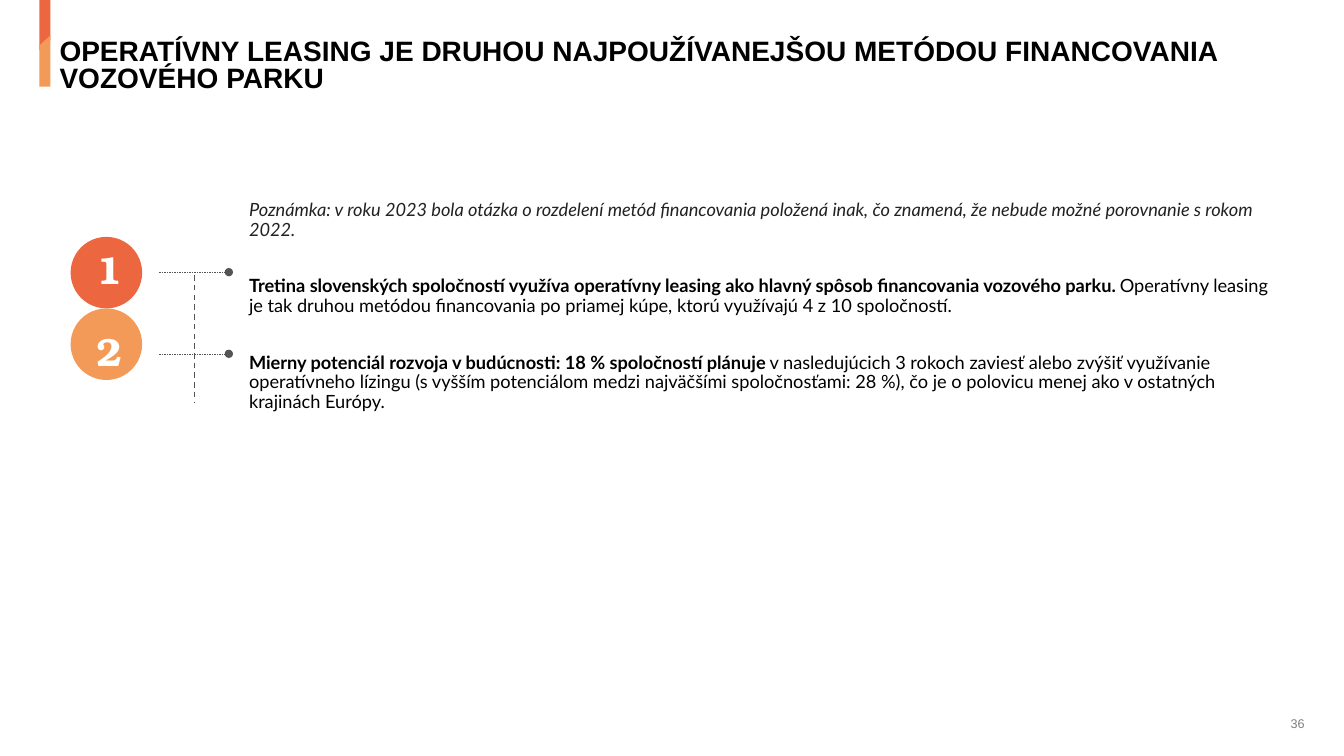
from lxml.etree import SubElement
from pptx import Presentation
from pptx.dml.color import RGBColor
from pptx.enum.dml import MSO_LINE
from pptx.enum.shapes import MSO_CONNECTOR, MSO_SHAPE
from pptx.enum.text import MSO_ANCHOR, PP_ALIGN
from pptx.oxml.ns import qn
from pptx.util import Inches, Pt

TITLE = "OPERATÍVNY LEASING JE DRUHOU NAJPOUŽÍVANEJŠOU METÓDOU FINANCOVANIA VOZOVÉHO PARKU"
NOTE = ("Poznámka: v roku 2023 bola otázka o rozdelení metód financovania položená inak, "
        "čo znamená, že nebude možné porovnanie s rokom 2022.")
FINDINGS = [
    ("Tretina slovenských spoločností využíva operatívny leasing ako hlavný spôsob "
     "financovania vozového parku. ",
     "Operatívny leasing je tak druhou metódou financovania po priamej kúpe, "
     "ktorú využívajú 4 z 10 spoločností."),
    ("Mierny potenciál rozvoja v budúcnosti: 18 % spoločností plánuje",
     " v nasledujúcich 3 rokoch zaviesť alebo zvýšiť využívanie operatívneho lízingu "
     "(s vyšším potenciálom medzi najväčšími spoločnosťami: 28 %), čo je o polovicu menej "
     "ako v ostatných krajinách Európy."),
]


def color(value):
    """Turn a hex string into a colour."""
    return RGBColor.from_string(value)


def add_span(para, text, font="Lato", size=13, fill="000000", bold=False, italic=False):
    """Add formatted text to a paragraph."""
    span = para.add_run()
    span.text = text
    span.font.name, span.font.size = font, Pt(size)
    span.font.bold, span.font.italic = bold, italic
    span.font.color.rgb = color(fill)


class PageBuilder:
    """Hold the style and the page being built."""

    accents = ("EC6740", "F39A58")
    rule = "545454"

    def __init__(self, page):
        """Keep the page."""
        self.page = page

    def place(self, box, left, top, width, height):
        """Move and size a box."""
        box.left, box.top = Inches(left), Inches(top)
        box.width, box.height = Inches(width), Inches(height)

    def frame(self, box, inset=0, wrap=True, anchor=MSO_ANCHOR.TOP):
        """Set the margins, wrapping and anchor of a box."""
        frame = box.text_frame
        frame.margin_left = Inches(inset)
        frame.margin_top = frame.margin_right = frame.margin_bottom = 0
        frame.word_wrap, frame.vertical_anchor = wrap, anchor
        return frame

    def paragraph(self, para, spacing=0.9, before=0, align=PP_ALIGN.LEFT):
        """Set the spacing and alignment of a paragraph."""
        para.line_spacing, para.space_before = spacing, Pt(before)
        para.space_after, para.alignment = Pt(0), align
        return para

    def title(self, text):
        """Fill the title placeholder."""
        box = self.page.shapes.title
        self.place(box, 0.39, 0.4, 12.55, 0.54)
        para = self.paragraph(self.frame(box, inset=0.2).paragraphs[0], spacing=0.8)
        add_span(para, text, font="Arial", size=20, bold=True)

    def body(self, note, findings):
        """Fill the body placeholder with the note and the findings."""
        box = self.page.placeholders[1]
        self.place(box, 2.47, 1.99, 10.25, 2.11)
        frame = self.frame(box)
        add_span(self.body_paragraph(frame.paragraphs[0]), note, fill="222222", italic=True)
        for lead, rest in findings:
            para = self.body_paragraph(frame.add_paragraph(), before=26.5)
            add_span(para, lead, bold=True)
            add_span(para, rest)

    def body_paragraph(self, para, before=0):
        """Take the bullet and indent off a body paragraph."""
        properties = para._p.get_or_add_pPr()
        properties.set("marL", "0")
        properties.set("indent", "0")
        SubElement(properties, qn("a:buNone"))
        return self.paragraph(para, before=before)

    def shape(self, kind, left, top, width, height, fill, rotation=0):
        """Add a plain filled shape."""
        shape = self.page.shapes.add_shape(
            kind, Inches(left), Inches(top), Inches(width), Inches(height))
        shape.shadow.inherit = False
        shape.fill.solid()
        shape.fill.fore_color.rgb = color(fill)
        shape.line.fill.background()
        shape.rotation = rotation

    def text(self, text, left, top, width, height, spacing=1.0,
             align=PP_ALIGN.LEFT, anchor=MSO_ANCHOR.TOP, **style):
        """Add a one-line text box."""
        box = self.page.shapes.add_textbox(
            Inches(left), Inches(top), Inches(width), Inches(height))
        frame = self.frame(box, wrap=False, anchor=anchor)
        para = self.paragraph(frame.paragraphs[0], spacing=spacing, align=align)
        add_span(para, text, **style)

    def line(self, start, end, width, dot=False):
        """Add a dashed line, with a dot at its end if asked."""
        line = self.page.shapes.add_connector(
            MSO_CONNECTOR.STRAIGHT, *(Inches(value) for value in start + end))
        line.line.color.rgb = color(self.rule)
        line.line.width = Pt(width)
        line.line.dash_style = MSO_LINE.DASH
        if dot:
            SubElement(line.line._get_or_add_ln(), qn("a:tailEnd"), type="oval")
        SubElement(line._element.spPr, qn("a:effectLst"))


def main():
    """Build the leasing page and save the deck."""
    deck = Presentation()
    deck.slide_width, deck.slide_height = Inches(13.33), Inches(7.5)
    page = deck.slides.add_slide(deck.slide_layouts[1])
    builder = PageBuilder(page)

    for index, accent in enumerate(builder.accents):
        builder.shape(MSO_SHAPE.FLOWCHART_MANUAL_INPUT, 0.39, -0.01 + 0.36 * index,
                      0.11, 0.51, accent, rotation=180 * (1 - index))
    builder.title(TITLE)
    builder.body(NOTE, FINDINGS)

    builder.line((1.93, 2.73), (1.93, 3.99), 1)
    for index, accent in enumerate(builder.accents):
        step = 0.81 * index
        builder.line((1.58, 2.7 + step), (2.27, 2.7 + step), 0.25, dot=True)
        builder.shape(MSO_SHAPE.OVAL, 0.7, 2.35 + 0.71 * index, 0.71, 0.71, accent)
        builder.text(str(index + 1), 0.96, 2.49 + step, 0.2, 0.42, spacing=0.9,
                     font="TeX Gyre Bonum", size=28, fill="FFFFFF", bold=True)
    builder.text("36", 12.71, 7.1, 0.23, 0.15, align=PP_ALIGN.RIGHT,
                 anchor=MSO_ANCHOR.MIDDLE, font="Arial", size=9, fill="808080")
    deck.save("out.pptx")


if __name__ == "__main__":
    main()
